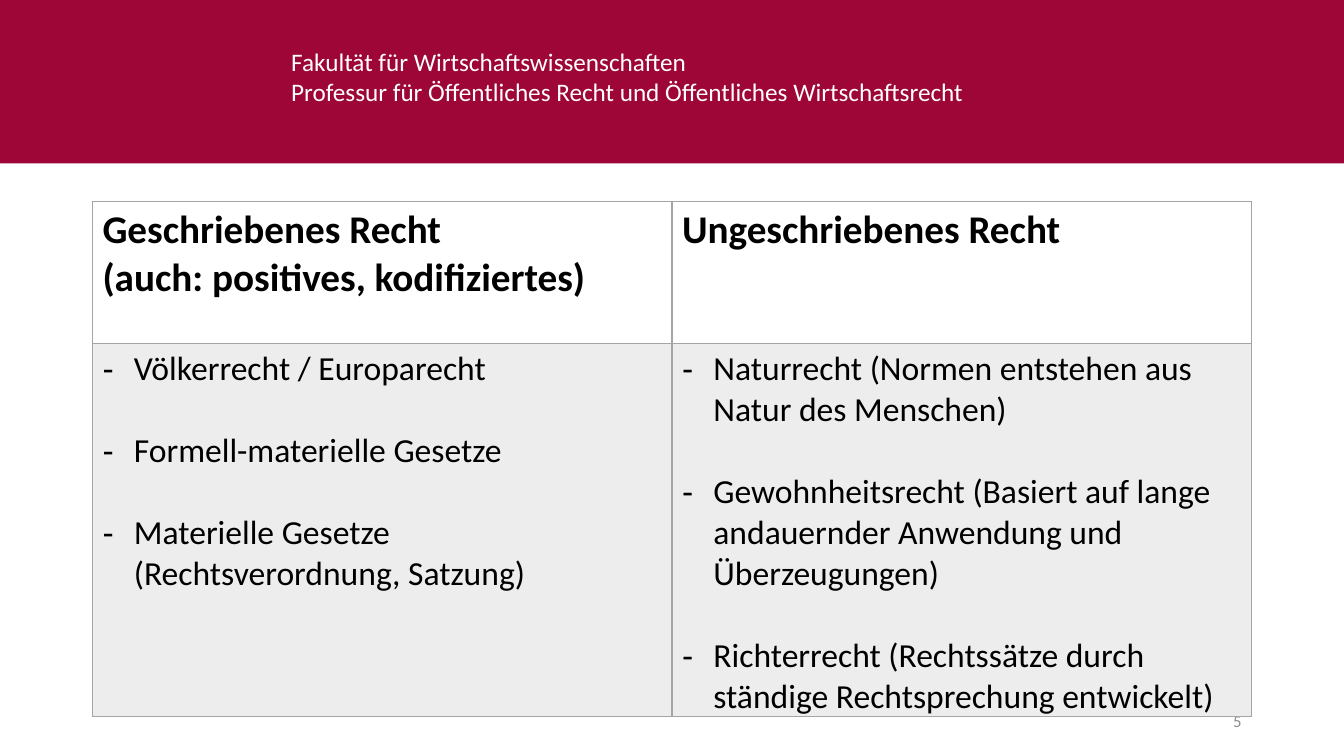
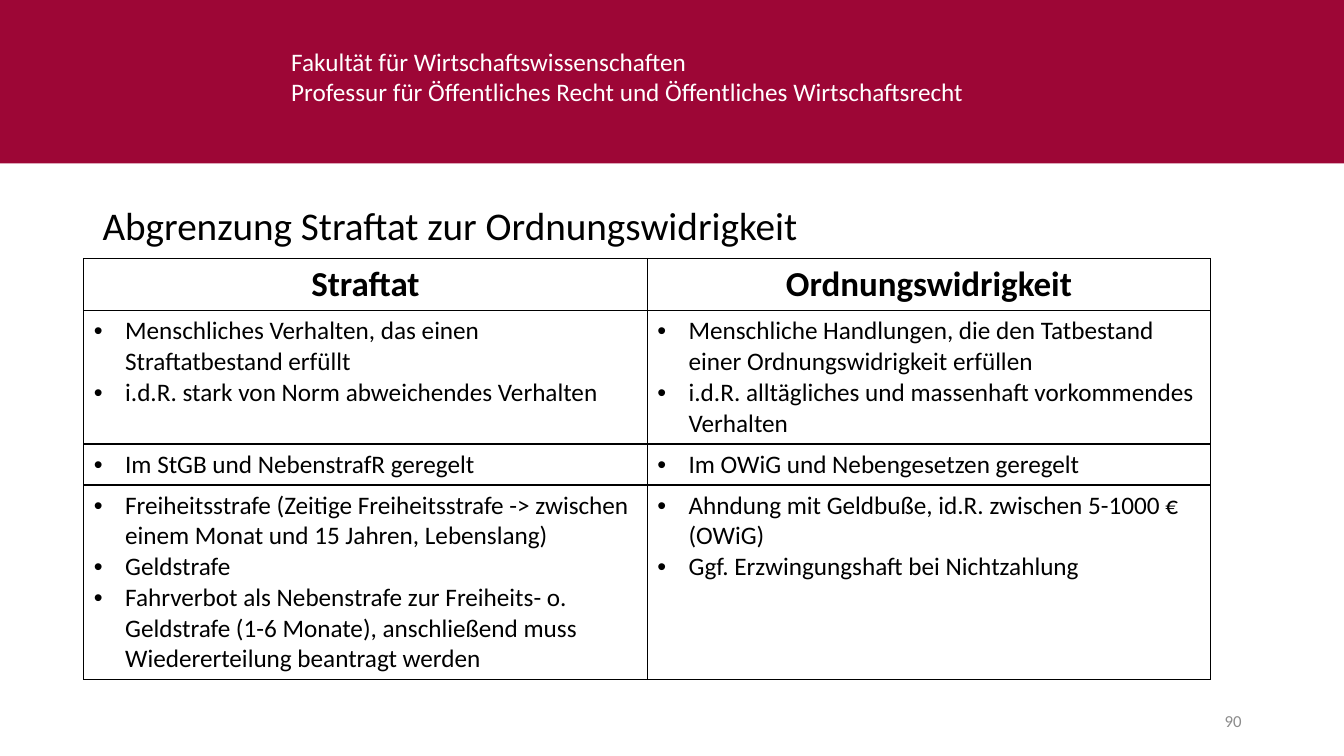
import pptx
import pptx.dml.color
import pptx.enum.shapes
import pptx.enum.text
import pptx.oxml
import pptx.oxml.ns
import pptx.util

Cm, Pt = pptx.util.Cm, pptx.util.Pt
ALIGN = pptx.enum.text.PP_ALIGN
ANCHOR = pptx.enum.text.MSO_ANCHOR
NS = pptx.oxml.ns.nsdecls("a")

RED, WHITE, BLACK, GREY, PALE, DIM = (
    "9D0636", "FFFFFF", "000000", "A5A5A5", "EDEDED", "8C8C8C")


def tint(code):
    return pptx.dml.color.RGBColor.from_string(code)


def write(frame, lines, size, color=BLACK, bold=False, mark=None, gap=0, **form):
    """Fill a text frame, one paragraph per line, with an optional bullet."""
    for i, line in enumerate(lines):
        para = frame.paragraphs[0] if i == 0 else frame.add_paragraph()
        for name, value in form.items():
            setattr(para, name, value)
        if i and gap:
            para.space_before = Pt(gap)
        if mark:
            props = para._p.get_or_add_pPr()
            props.set("marL", str(Cm(0.79)))
            props.set("indent", str(-Cm(0.79)))
            props.append(pptx.oxml.parse_xml(f'<a:buFont {NS} typeface="Arial"/>'))
            props.append(pptx.oxml.parse_xml(f'<a:buChar {NS} char="{mark}"/>'))
        run = para.add_run()
        run.text = line
        font = {"name": "Calibri", "size": Pt(size), "bold": bold}
        for name, value in font.items():
            setattr(run.font, name, value)
        run.font.color.rgb = tint(color)


deck = pptx.Presentation()
deck.slide_width, deck.slide_height = Cm(33.87), Cm(19.05)

# Slide content
pages = [
    {
        "layout": 6, "title": None, "number": "5",
        "box": (2.33, 5.08, 29.21), "rows": [3.58, 9.4],
        "line": GREY, "fill": PALE, "foot": 0,
        "head": {"size": 28, "bold": True},
        "body": {"size": 24, "mark": "-", "gap": 29.3},
        "cells": [
            [["Geschriebenes Recht", "(auch: positives, kodifiziertes)"],
             ["Ungeschriebenes Recht"]],
            [["Völkerrecht / Europarecht",
              "Formell-materielle Gesetze",
              "Materielle Gesetze (Rechtsverordnung, Satzung)"],
             ["Naturrecht (Normen entstehen aus Natur des Menschen)",
              "Gewohnheitsrecht (Basiert auf lange andauernder Anwendung "
              "und Überzeugungen)",
              "Richterrecht (Rechtssätze durch ständige Rechtsprechung "
              "entwickelt)"]],
        ],
    },
    {
        "layout": 5, "title": "Abgrenzung Straftat zur Ordnungswidrigkeit",
        "number": "90",
        "box": (2.11, 6.51, 28.4), "rows": [1.32, 3.36, 1.03, 4.91],
        "line": BLACK, "fill": WHITE, "foot": 0.13,
        "head": {"size": 25, "bold": True, "alignment": ALIGN.CENTER},
        "body": {"size": 18, "mark": "•"},
        "cells": [
            [["Straftat"], ["Ordnungswidrigkeit"]],
            [["Menschliches Verhalten, das einen Straftatbestand erfüllt",
              "i.d.R. stark von Norm abweichendes Verhalten"],
             ["Menschliche Handlungen, die den Tatbestand einer "
              "Ordnungswidrigkeit erfüllen",
              "i.d.R. alltägliches und massenhaft vorkommendes Verhalten"]],
            [["Im StGB und NebenstrafR geregelt"],
             ["Im OWiG und Nebengesetzen geregelt"]],
            [["Freiheitsstrafe (Zeitige Freiheitsstrafe -> zwischen einem "
              "Monat und 15 Jahren, Lebenslang)",
              "Geldstrafe",
              "Fahrverbot als Nebenstrafe zur Freiheits- o. Geldstrafe "
              "(1-6 Monate), anschließend muss Wiedererteilung beantragt "
              "werden"],
             ["Ahndung mit Geldbuße, id.R. zwischen 5-1000 € (OWiG)",
              "Ggf. Erzwingungshaft bei Nichtzahlung"]],
        ],
    },
]

slides = [deck.slides.add_slide(deck.slide_layouts[page["layout"]])
          for page in pages]

# Red band and faculty lines, moved to the master behind everything
shapes = slides[0].shapes
band = shapes.add_shape(pptx.enum.shapes.MSO_SHAPE.RECTANGLE,
                        0, 0, deck.slide_width, Cm(4.12))
band.shadow.inherit = False
band.fill.solid()
band.fill.fore_color.rgb = tint(RED)
band.line.fill.background()
label = shapes.add_textbox(Cm(7.09), Cm(1.04), Cm(21.36), Cm(1.8))
label.text_frame.word_wrap = True
write(label.text_frame,
      ["Fakultät für Wirtschaftswissenschaften",
       "Professur für Öffentliches Recht und Öffentliches Wirtschaftsrecht"],
      18, WHITE)
for i, shape in enumerate([band, label]):
    shape._element.xpath(".//p:cNvPr")[0].set("id", str(100 + i))
    deck.slide_master.shapes._spTree.insert(2 + i, shape._element)

for page, slide in zip(pages, slides):
    # Title
    if page["title"]:
        title = slide.shapes.title
        place = {"left": 2.33, "top": 5.08, "width": 29.21, "height": 1.4}
        for name, value in place.items():
            setattr(title, name, Cm(value))
        frame = title.text_frame
        frame.auto_size = pptx.enum.text.MSO_AUTO_SIZE.NONE
        frame.vertical_anchor = ANCHOR.TOP
        write(frame, [page["title"]], 28, alignment=ALIGN.LEFT, line_spacing=0.9)

    # Page number
    number = slide.shapes.add_textbox(Cm(23.92), Cm(17.66), Cm(7.62), Cm(1.01))
    number.text_frame.word_wrap = True
    number.text_frame.vertical_anchor = ANCHOR.MIDDLE
    write(number.text_frame, [page["number"]], 12, DIM, alignment=ALIGN.RIGHT)

    # Table
    left, top, width = page["box"]
    rows = page["rows"]
    table = slide.shapes.add_table(len(rows), 2, Cm(left), Cm(top),
                                   Cm(width), Cm(sum(rows))).table
    table.first_row = table.horz_banding = False
    for r, high in enumerate(rows):
        table.rows[r].height = Cm(high)
        for c, lines in enumerate(page["cells"][r]):
            cell = table.cell(r, c)
            for side in "LRTB":
                cell._tc.get_or_add_tcPr().append(pptx.oxml.parse_xml(
                    f'<a:ln{side} {NS} w="{Pt(1)}"><a:solidFill>'
                    f'<a:srgbClr val="{page["line"]}"/>'
                    f'</a:solidFill></a:ln{side}>'))
            cell.fill.solid()
            cell.fill.fore_color.rgb = tint(page["fill"] if r else WHITE)
            if r:
                cell.margin_bottom = Cm(page["foot"])
            write(cell.text_frame, lines, **page["body" if r else "head"])

deck.save("out.pptx")
